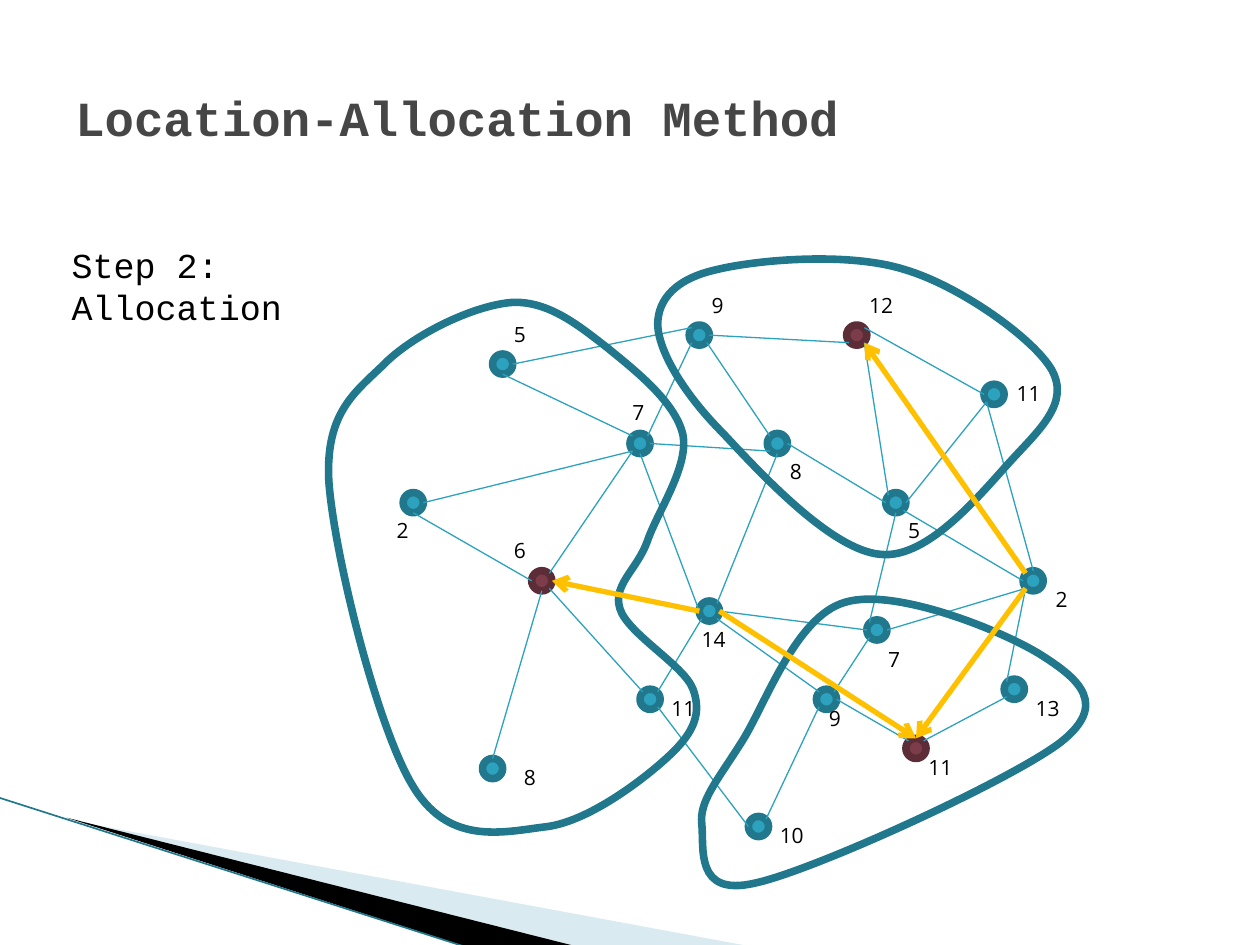
from dataclasses import dataclass

from lxml import etree
from pptx import Presentation
from pptx.dml.color import RGBColor
from pptx.enum.shapes import MSO_CONNECTOR, MSO_SHAPE
from pptx.enum.text import MSO_ANCHOR
from pptx.oxml.ns import qn
from pptx.util import Pt

PX = 9144  # 100 px to the inch
OVAL = MSO_SHAPE.OVAL
STRAIGHT = MSO_CONNECTOR.STRAIGHT
MIDDLE, TOP = MSO_ANCHOR.MIDDLE, MSO_ANCHOR.TOP


@dataclass(frozen=True)
class Theme:
    ink: str = "000000"
    head: str = "464646"
    teal: str = "2DA2BF"
    rim: str = "21788D"
    hub: str = "7D3C4A"
    hubrim: str = "5C2C37"
    gold: str = "FFC000"
    pale: str = "A0CBDC"
    edge: str = "97C5D8"
    mono: str = "Courier New"
    sans: str = "Open Sans"
    title: int = 28
    body: int = 20
    label: int = 12
    thin: float = 0.75
    thick: float = 4.33
    arrow: int = 3


RADIUS = 8
SITES = {
    "n": (0, -8), "ne": (6, -6), "e": (8, 0), "se": (6, 6),
    "s": (0, 8), "sw": (-6, 6), "w": (-8, 0), "nw": (-6, -6),
}

# key: centre, label, left and top of label
NODES = {
    "A": (399, 289, "5", 398, 250), "B": (328, 399, "2", 305, 406),
    "C": (555, 266, "9", 555, 227), "D": (430, 461, "6", 398, 422),
    "E": (617, 352, "8", 617, 359), "F": (508, 352, "7", 492, 312),
    "G": (711, 399, "5", 711, 406), "H": (516, 555, "11", 523, 547),
    "I": (563, 485, "14", 547, 492), "J": (696, 500, "7", 695, 508),
    "K": (680, 266, "12", 680, 227), "L": (820, 461, "2", 828, 461),
    "M": (656, 555, "9", 648, 555), "N": (805, 547, "13", 812, 547),
    "O": (391, 610, "8", 406, 602), "P": (727, 594, "11", 727, 594),
    "Q": (602, 656, "10", 609, 648), "R": (789, 313, "11", 797, 297),
}
HUBS = "DKP"

# each end is a node key and the side of its circle
LINKS = """
As-Fnw Ae-Cnw Be-Fsw Dw-Bs On-Ds Fne-Csw Dne-Fsw Ce-Ksw Cse-Enw Fe-Esw
Fs-Iw Hnw-Dse Hse-Qw Hne-Isw Ee-Gw Kse-Gnw Kne-Rw Ge-Rsw Gs-Jnw Ie-Jw
Ise-Mnw Qne-Msw Me-Pnw Pne-Nsw Mne-Jsw Nnw-Lsw Ln-Rsw Gse-Lw Je-Lsw Ine-Es
"""
ARROWS = "Iw-De Ie-Pn Lsw-Pn Lnw-Kse"

# start point, then three points for each curve
REGIONS = [
    [(261, 382), (258, 325), (284, 310), (308, 286),
     (333, 263), (378, 242), (407, 240), (436, 239), (460, 259), (482, 276),
     (504, 294), (536, 319), (542, 345), (547, 370), (522, 406), (514, 429),
     (506, 452), (486, 464), (492, 483), (498, 503), (543, 528), (550, 547),
     (557, 566), (551, 581), (532, 599), (513, 617), (469, 651), (435, 656),
     (401, 660), (358, 672), (329, 626), (300, 581), (265, 439), (261, 382)],
    [(599, 701), (551, 712), (559, 673), (557, 654),
     (555, 636), (569, 620), (588, 590), (607, 561), (631, 489), (671, 478),
     (711, 466), (799, 502), (828, 521), (856, 539), (880, 559), (842, 589),
     (803, 619), (646, 691), (599, 701)],
    [(569, 214), (537, 221), (522, 237), (522, 258),
     (523, 280), (544, 314), (574, 344), (603, 375), (660, 437), (699, 440),
     (737, 444), (780, 390), (803, 365), (825, 341), (849, 320), (835, 294),
     (821, 269), (762, 227), (718, 214), (674, 200), (602, 206), (569, 214)],
]


def rgb(color):
    return RGBColor.from_string(color)


def ends(plan):
    """Yield both end points of every link in the plan."""
    for link in plan.split():
        yield [(NODES[end[0]][0] + SITES[end[1:]][0],
                NODES[end[0]][1] + SITES[end[1:]][1])
               for end in link.split("-")]


class Board:
    def __init__(self, slide, theme):
        self.shapes = slide.shapes
        self.theme = theme

    def paint(self, shape, fill=None, line=None, width=0):
        shape.shadow.inherit = False
        if fill:
            shape.fill.solid()
            shape.fill.fore_color.rgb = rgb(fill)
        else:
            shape.fill.background()
        if line:
            shape.line.color.rgb = rgb(line)
            shape.line.width = Pt(width)
        else:
            shape.line.fill.background()

    def text(self, words, box, *, size, font, color=None, bold=False,
             wrap=False, anchor=TOP):
        frame = self.shapes.add_textbox(*(n * PX for n in box)).text_frame
        frame.word_wrap = wrap
        frame.vertical_anchor = anchor
        run = frame.paragraphs[0].add_run()
        run.text = words
        run.font.size, run.font.name, run.font.bold = Pt(size), font, bold
        run.font.color.rgb = rgb(color or self.theme.ink)

    def node(self, x, y, fill, line):
        side = 2 * RADIUS * PX
        dot = self.shapes.add_shape(
            OVAL, (x - RADIUS) * PX, (y - RADIUS) * PX, side, side)
        self.paint(dot, fill, line, self.theme.thick)

    def link(self, start, end, color, width, arrow=False):
        line = self.shapes.add_connector(
            STRAIGHT, *(n * PX for n in (*start, *end)))
        line.line.color.rgb = rgb(color)
        line.line.width = Pt(width)
        props = line.element.spPr
        if arrow:
            etree.SubElement(props.find(qn("a:ln")), qn("a:tailEnd"), type="arrow")
        etree.SubElement(props, qn("a:effectLst"))

    def outline(self, points):
        pen = self.shapes.build_freeform(*points[0], scale=PX)
        pen.add_line_segments(points[1:], close=True)
        return pen.convert_to_shape()

    def wedge(self, points, fill, alpha=100):
        shape = self.outline(points)
        self.paint(shape, fill)
        color = next(shape.element.iter(qn("a:srgbClr")))
        if alpha < 100:
            etree.SubElement(color, qn("a:alpha"), val=str(alpha * 1000))

    def region(self, points):
        """Draw a closed outline whose points are Bezier controls."""
        shape = self.outline(points)
        steps = list(shape.element.iter(qn("a:lnTo")))
        for i in range(0, len(steps), 3):
            curve = etree.Element(qn("a:cubicBezTo"))
            steps[i].addprevious(curve)
            for step in steps[i:i + 3]:
                curve.append(step[0])
                step.getparent().remove(step)
        self.paint(shape, line=self.theme.rim, width=self.theme.thick)


def main():
    deck = Presentation()
    deck.slide_width, deck.slide_height = 1000 * PX, 750 * PX
    look = Theme()
    board = Board(deck.slides.add_slide(deck.slide_layouts[6]), look)

    board.wedge([(55, 651), (595, 751), (456, 751)], look.pale, alpha=40)
    board.wedge([(53, 649), (457, 751), (372, 752)], look.ink)
    board.link((-1, 633), (371, 752), look.rim, 0.95)
    board.text("Location-Allocation Method", (50, 30, 900, 125), size=look.title,
               font=look.mono, color=look.head, bold=True, wrap=True, anchor=MIDDLE)

    for key, (x, y, *_) in NODES.items():
        pair = (look.hub, look.hubrim) if key in HUBS else (look.teal, look.rim)
        board.node(x, y, *pair)
    for start, end in ends(LINKS):
        board.link(start, end, look.teal, look.thin)
    for _, _, name, left, top in NODES.values():
        board.text(name, (left, top, 20 + 11 * len(name), 30),
                   size=look.label, font=look.sans)
    board.text("Step 2: Allocation", (47, 188, 259, 44), size=look.body,
               font=look.mono, wrap=True)

    for points in REGIONS:
        board.region(points)
    for start, end in ends(ARROWS):
        board.link(start, end, look.gold, look.arrow, arrow=True)
    deck.save("out.pptx")


if __name__ == "__main__":
    main()
